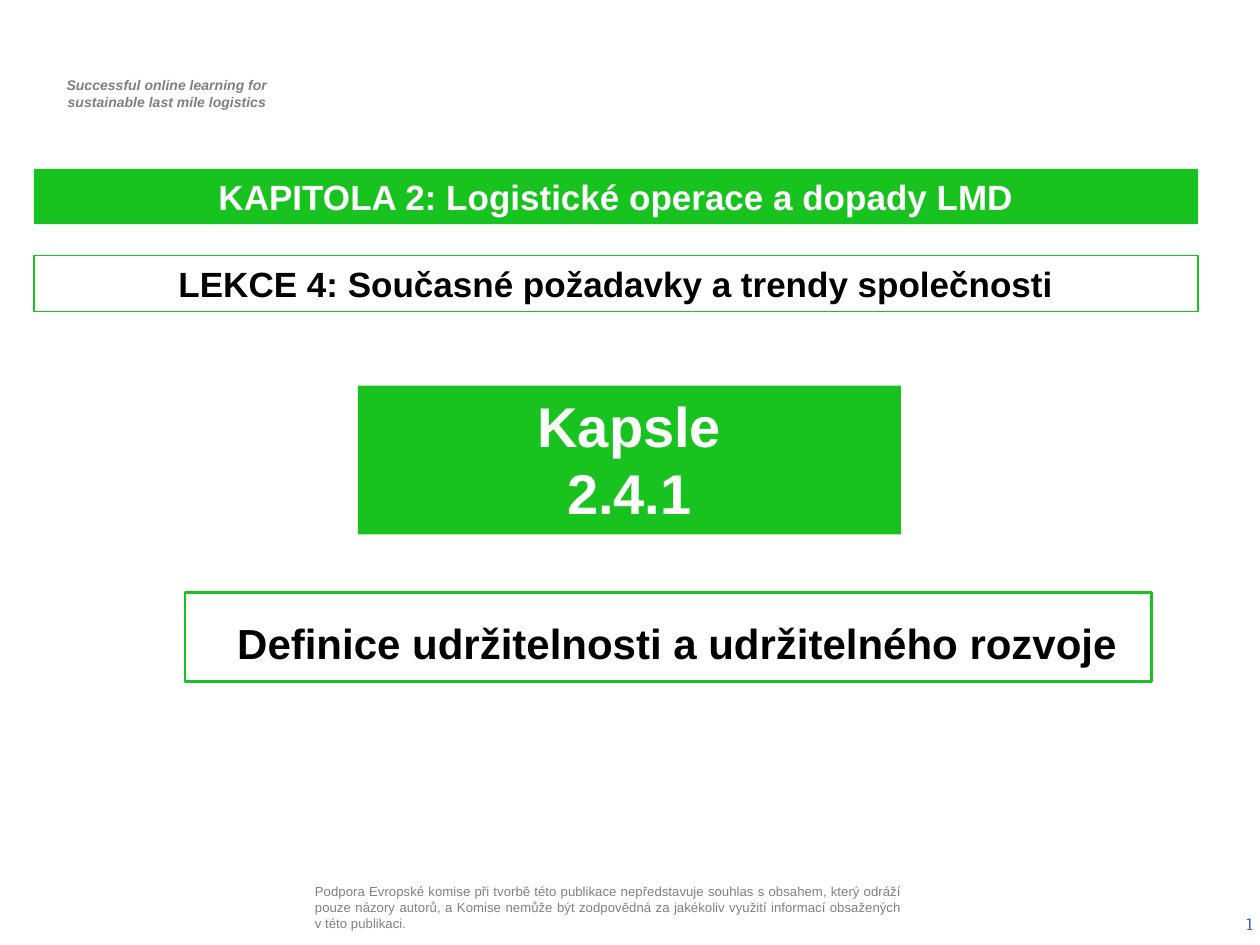
from lxml import etree
from pptx import Presentation
from pptx.dml.color import RGBColor
from pptx.enum import shapes, text
from pptx.oxml.ns import qn
from pptx.util import Pt

GREEN, WHITE, BLACK, GREY = "18C320", "FFFFFF", "000000", "7F7F7F"
AL, ANC = text.PP_ALIGN, text.MSO_ANCHOR


def rgb(value):
    return RGBColor.from_string(value)


def write(sp, lines, size, color, align=AL.CENTER, anchor=ANC.TOP,
          bold=False, italic=False, font="Arial", margins=(7.2, 3.6, 7.2, 3.6)):
    tf = sp.text_frame
    tf.text = lines
    tf.word_wrap = True
    tf.auto_size = text.MSO_AUTO_SIZE.NONE
    tf.vertical_anchor = anchor
    tf.margin_left, tf.margin_top, tf.margin_right, tf.margin_bottom = map(Pt, margins)
    for p in tf.paragraphs:
        p.alignment = align
        for r in p.runs:
            r.font.name, r.font.size = font, Pt(size)
            r.font.bold, r.font.italic = bold, italic
            r.font.color.rgb = rgb(color)


prs = Presentation()
prs.slide_width, prs.slide_height = Pt(720), Pt(540)
s = prs.slides.add_slide(prs.slide_layouts[5])

sp = s.shapes.add_textbox(Pt(20.9), Pt(40.3), Pt(146.2), Pt(26.6))
write(sp, "Successful online learning for\nsustainable last mile logistics", 8, GREY,
      bold=True, italic=True, margins=(10, 3.6, 7.2, 3.6))

sp = s.shapes.add_textbox(Pt(177.1), Pt(500.4), Pt(340.6), Pt(36))
write(sp, "Podpora Evropské komise při tvorbě této publikace nepředstavuje souhlas s obsahem, "
      "který odráží pouze názory autorů, a Komise nemůže být zodpovědná za jakékoliv využití "
      "informací obsažených v této publikaci.", 7.5, "808080",
      align=AL.JUSTIFY, anchor=ANC.MIDDLE, margins=(2.9, 2.9, 2.9, 2.9))

sp = s.shapes.add_textbox(Pt(555.1), Pt(513.4), Pt(167.8), Pt(28.8))
write(sp, "1", 10, "3366CC", align=AL.RIGHT, anchor=ANC.MIDDLE, font="Cambria")
r = sp.text_frame.paragraphs[0].runs[0]._r
fld = etree.Element(qn("a:fld"), id="{B6F15528-21DE-4FAA-801E-634DDDAF4B2B}", type="slidenum")
r.getparent().replace(r, fld)
fld.extend(list(r))

boxes = [
    ("KAPITOLA 2: Logistické operace a dopady LMD", 19.4, 96.5, 665.3, 31.7, 20, GREEN, None),
    ("LEKCE 4: Současné požadavky a trendy společnosti", 19.4, 146.2, 665.3, 31.7, 20, None, 0.75),
    ("Kapsle\n2.4.1", 204.5, 220.3, 310.3, 85, 32, GREEN, None),
]
for lines, x, y, w, h, size, fill, line in boxes:
    sp = s.shapes.add_shape(shapes.MSO_SHAPE.RECTANGLE, Pt(x), Pt(y), Pt(w), Pt(h))
    sp.shadow.inherit = False
    if fill:
        sp.fill.solid()
        sp.fill.fore_color.rgb = rgb(fill)
        sp.line.fill.background()
    else:
        sp.fill.background()
        sp.line.color.rgb = rgb(GREEN)
        sp.line.width = Pt(line)
    write(sp, lines, size, WHITE if fill else BLACK, bold=True)

sp = s.shapes.title
sp.left, sp.top, sp.width, sp.height = Pt(105.8), Pt(338.4), Pt(552.2), Pt(51.1)
sp.line.color.rgb = rgb(GREEN)
sp.line.width = Pt(1.5)
write(sp, "Definice udržitelnosti a udržitelného rozvoje", 24, BLACK, bold=True,
      margins=(17.2, 14.5, 7.2, 3.6))

prs.save("out.pptx")
